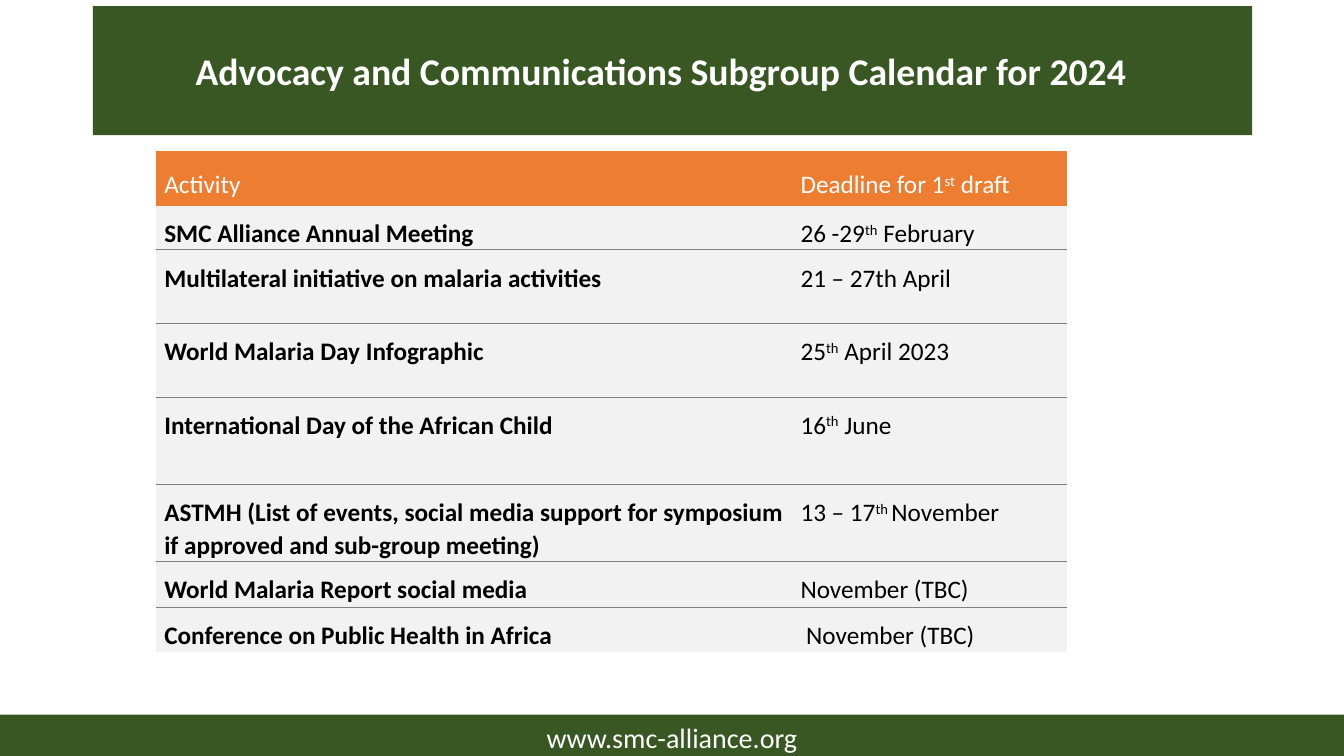
from dataclasses import dataclass

from lxml import etree
from pptx import Presentation
from pptx import util as u
from pptx.dml.color import RGBColor
from pptx.enum import shapes, text
from pptx.oxml import ns


@dataclass(frozen=True)
class Theme:
    font: str = "Calibri"
    green: str = "385723"
    orange: str = "ED7D31"
    grey: str = "F2F2F2"
    rule: str = "808080"
    white: str = "FFFFFF"
    black: str = "000000"
    title_size: float = 26.9
    table_size: float = 18
    footer_size: float = 20


@dataclass(frozen=True)
class Activity:
    name: str
    deadline: str
    height: float


THEME = Theme()
NO_GRID_STYLE = "{2D5ABB26-0587-4C30-8999-92F81FD0307C}"
COLUMN_WIDTHS = (6.31, 2.72)
ACTIVITIES = [
    Activity("Activity", "Deadline for 1^st^ draft", 0.54),
    Activity("SMC Alliance Annual Meeting", "26 -29^th^ February", 0.44),
    Activity("Multilateral initiative on malaria activities", "21 – 27th April", 0.73),
    Activity("World Malaria Day Infographic", "25^th^ April 2023", 0.73),
    Activity("International Day of the African Child", "16^th^ June", 0.87),
    Activity("ASTMH (List of events, social media support for symposium "
             "if approved and sub-group meeting)", "13 – 17^th ^November", 0.76),
    Activity("World Malaria Report social media", "November (TBC)", 0.45),
    Activity("Conference on Public Health in Africa", " November (TBC)", 0.45),
]


def apply(target, values: dict) -> None:
    for name, value in values.items():
        setattr(target, name, value)


def paint(target, color: str) -> None:
    target.fill.solid()
    target.fill.fore_color.rgb = RGBColor.from_string(color)


def write(p, content: str, size: float, color: str, bold: bool = False) -> None:
    for i, part in enumerate(content.split("^")):
        r = p.add_run()
        r.text = part
        apply(r.font, {"name": THEME.font, "size": u.Pt(size), "bold": bold})
        r.font.color.rgb = RGBColor.from_string(color)
        if i % 2:
            r.font._element.set("baseline", "30000")


def add_rule(cell, side: str, position: int) -> None:
    ln = etree.Element(ns.qn(f"a:{side}"), w=str(u.Pt(0.75)))
    fill = etree.SubElement(ln, ns.qn("a:solidFill"))
    etree.SubElement(fill, ns.qn("a:srgbClr"), val=THEME.rule)
    cell._tc.get_or_add_tcPr().insert(position, ln)


def add_title(s) -> None:
    sp = s.shapes.title
    apply(sp, {"left": u.Inches(0.92), "top": u.Inches(0.06),
               "width": u.Inches(11.5), "height": u.Inches(1.28)})
    paint(sp, THEME.green)
    tf = sp.text_frame
    apply(tf, {"margin_left": u.Inches(1.02), "word_wrap": True,
               "auto_size": text.MSO_AUTO_SIZE.NONE,
               "vertical_anchor": text.MSO_ANCHOR.MIDDLE})
    p = tf.paragraphs[0]
    apply(p, {"alignment": text.PP_ALIGN.LEFT, "line_spacing": 1.0})
    write(p, "Advocacy and Communications Subgroup Calendar for 2024",
          THEME.title_size, THEME.white, True)


def add_calendar(s) -> None:
    height = sum(a.height for a in ACTIVITIES)
    frame = s.shapes.add_table(
        len(ACTIVITIES), len(COLUMN_WIDTHS), u.Inches(1.55), u.Inches(1.5),
        u.Inches(sum(COLUMN_WIDTHS)), u.Inches(height))
    table = frame.table
    table._tbl.tblPr.find(ns.qn("a:tableStyleId")).text = NO_GRID_STYLE
    apply(table, {"first_row": False, "horz_banding": False})
    for column, width in zip(table.columns, COLUMN_WIDTHS):
        column.width = u.Inches(width)
    for i, activity in enumerate(ACTIVITIES):
        header = i == 0
        table.rows[i].height = u.Inches(activity.height)
        for j, content in enumerate((activity.name, activity.deadline)):
            cell = table.cell(i, j)
            apply(cell, {
                "margin_left": u.Inches(0.08), "margin_top": u.Inches(0.11),
                "margin_right": u.Inches(0.08), "margin_bottom": 0,
                "vertical_anchor": text.MSO_ANCHOR.MIDDLE if header else text.MSO_ANCHOR.TOP})
            paint(cell, THEME.orange if header else THEME.grey)
            if 0 < i < len(ACTIVITIES) - 1:
                add_rule(cell, "lnB", 0)
            if i > 1:
                add_rule(cell, "lnT", 0)
            p = cell.text_frame.paragraphs[0]
            apply(p, {"line_spacing": 1.07, "space_after": u.Pt(8)})
            write(p, content, THEME.table_size,
                  THEME.white if header else THEME.black, not header and j == 0)


def add_footer(s) -> None:
    sp = s.shapes.add_shape(shapes.MSO_SHAPE.RECTANGLE, 0, u.Inches(7.09),
                            u.Inches(13.33), u.Inches(0.44))
    sp.shadow.inherit = False
    paint(sp, THEME.green)
    sp.line.fill.background()
    tf = sp.text_frame
    apply(tf, {"word_wrap": True, "vertical_anchor": text.MSO_ANCHOR.MIDDLE})
    p = tf.paragraphs[0]
    p.alignment = text.PP_ALIGN.CENTER
    write(p, "www.smc-alliance.org", THEME.footer_size, THEME.white)


def main() -> None:
    prs = Presentation()
    apply(prs, {"slide_width": u.Inches(13.33), "slide_height": u.Inches(7.5)})
    s = prs.slides.add_slide(prs.slide_layouts[5])
    add_title(s)
    add_calendar(s)
    add_footer(s)
    prs.save("out.pptx")


if __name__ == "__main__":
    main()
